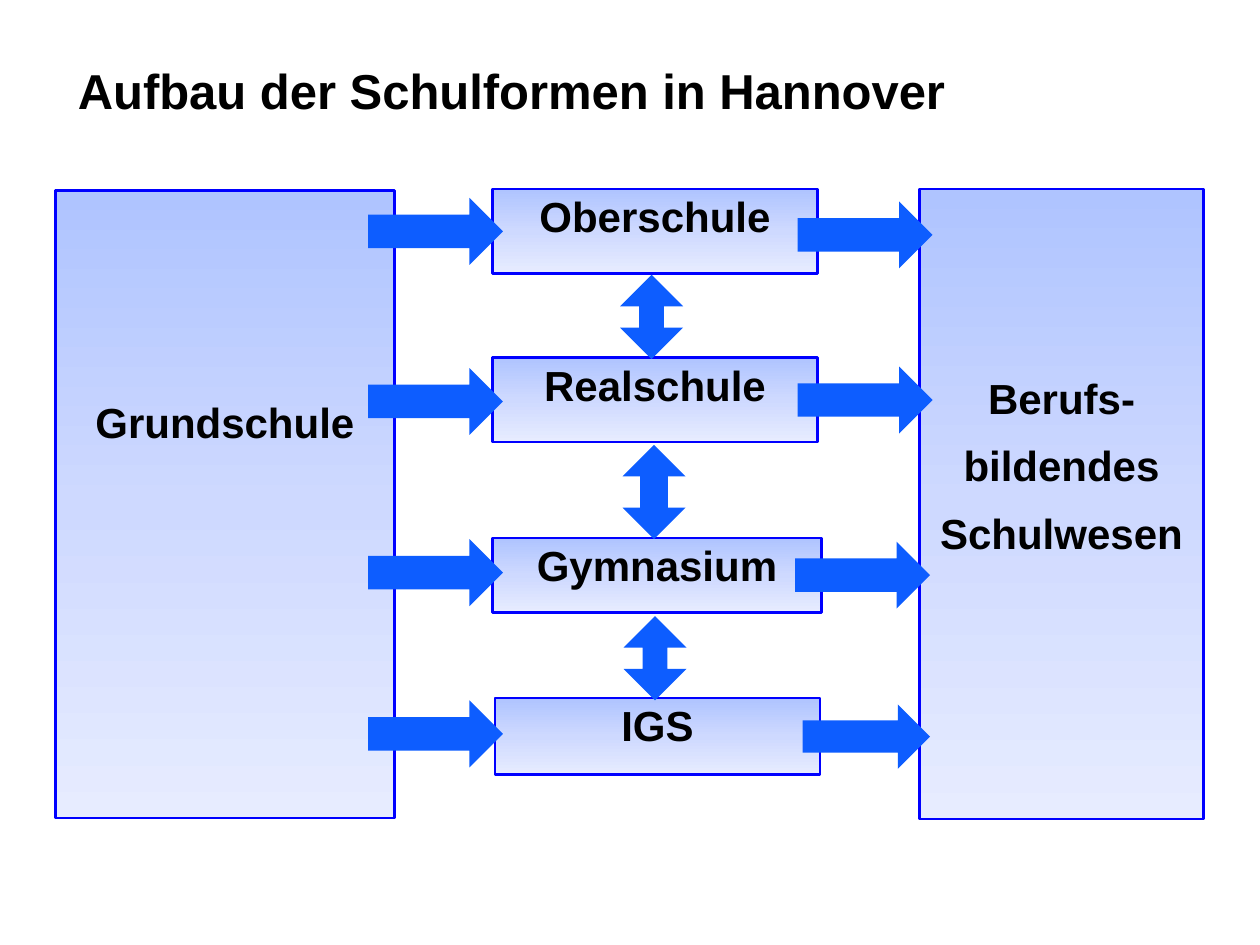
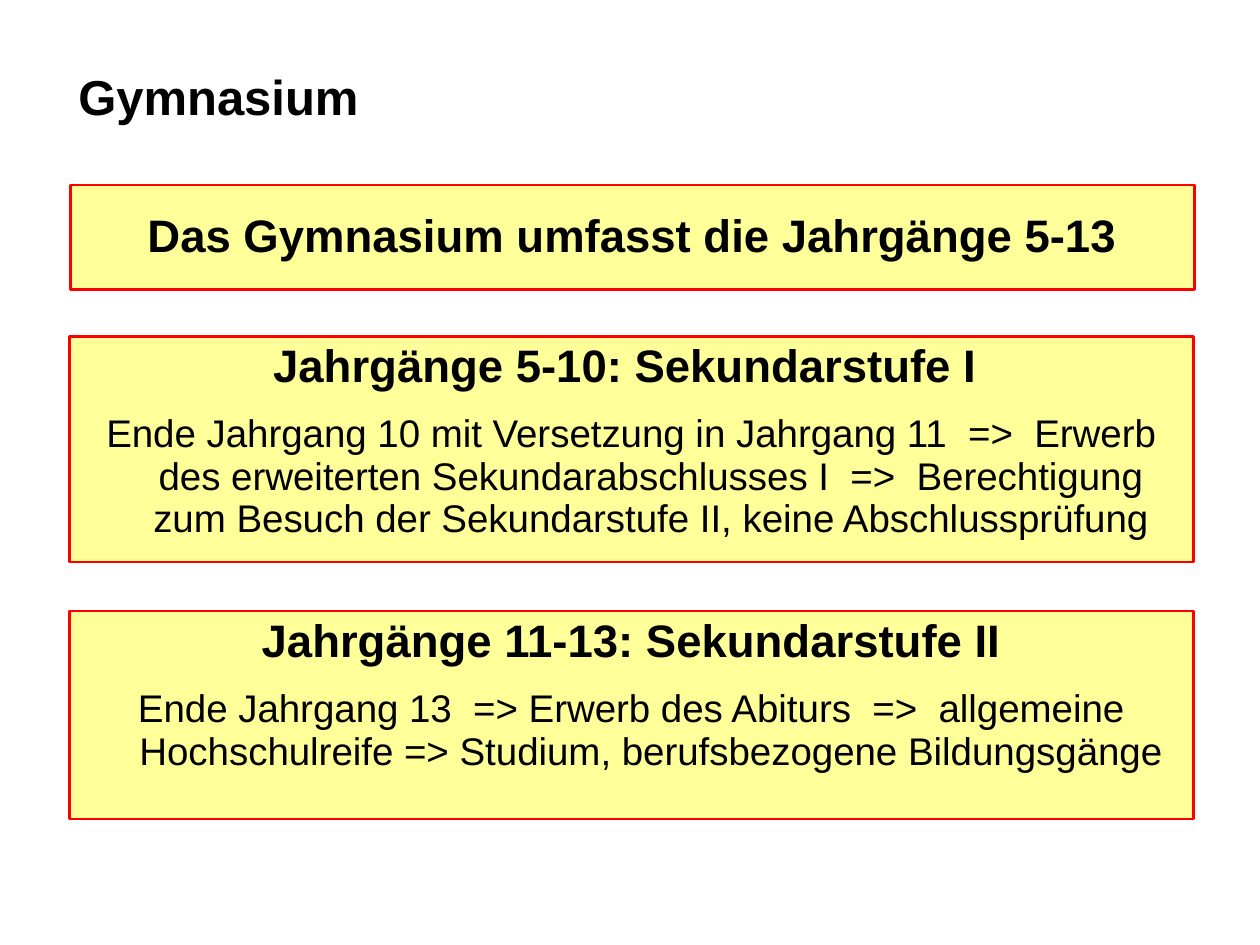
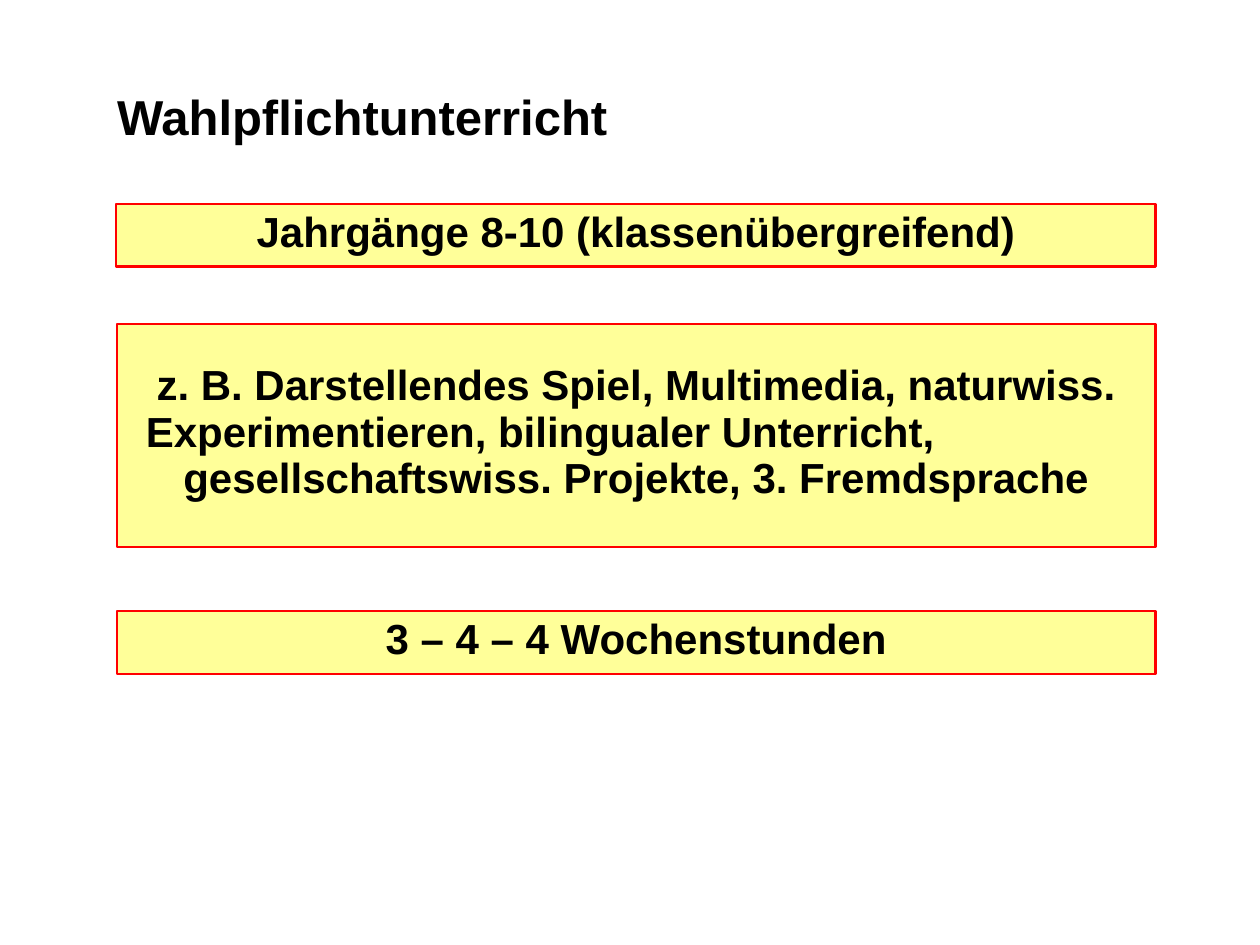
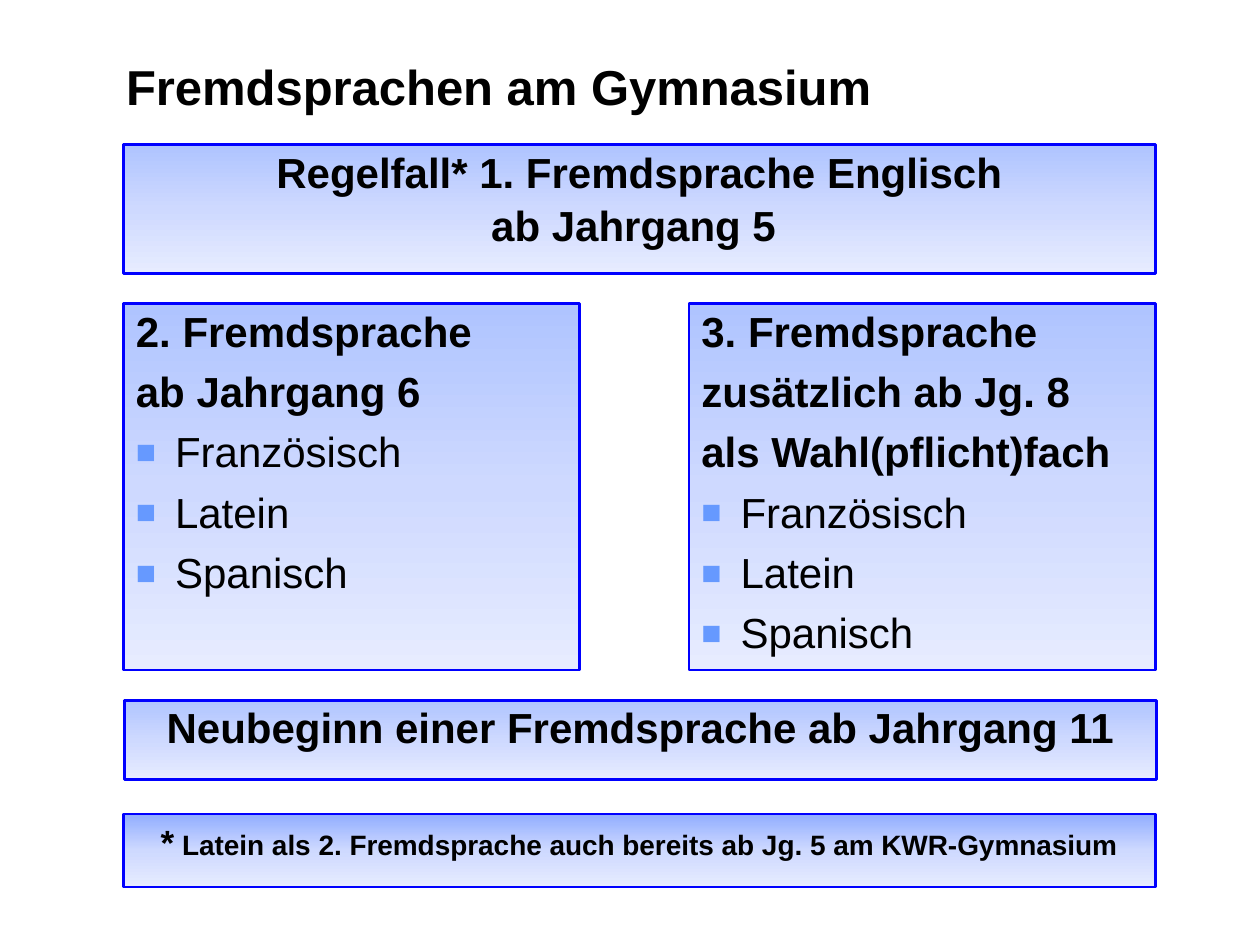
from dataclasses import dataclass

import lxml.etree
import pptx
import pptx.dml.color
import pptx.enum.shapes
import pptx.enum.text
import pptx.oxml.ns
import pptx.presentation
import pptx.shapes.autoshape
import pptx.slide
import pptx.text.text
import pptx.util

Cm = pptx.util.Cm
Pt = pptx.util.Pt
Kind = pptx.enum.shapes.MSO_SHAPE
Align = pptx.enum.text.PP_ALIGN
Anchor = pptx.enum.text.MSO_ANCHOR
qn = pptx.oxml.ns.qn


@dataclass(frozen=True)
class Theme:
    font: str = "Arial"
    ink: str = "000000"
    blue: tuple[str, ...] = ("AFC4FF", "CED9FF", "E7ECFF")
    deep: tuple[str, ...] = ("91ADFF", "CED9FF", "E7ECFF")
    edge: str = "0000FF"
    sand: tuple[str, ...] = ("FFFF99",)
    red: str = "FF0000"
    arrow: str = "0D5DFF"
    bullet: str = "6699FF"
    title: int = 28
    head: int = 26
    main: int = 24
    body: int = 22
    star: int = 20
    note: int = 16
    line: float = 1.5
    lead: float = 0.92


THEME = Theme()
HANG = 0.79


@dataclass(frozen=True)
class Place:
    left: float
    top: float
    width: float
    height: float


@dataclass(frozen=True)
class Para:
    text: str
    size: int = THEME.main
    bold: bool = True
    align: Align = Align.CENTER
    left: float = 0
    hang: float = 0
    bullet: bool = False
    star: str = ""
    lead: float = THEME.lead


@dataclass(frozen=True)
class Box:
    place: Place
    paras: tuple[Para, ...]
    fill: tuple[str, ...] = THEME.blue
    edge: str = THEME.edge
    gap: float = 12
    inset: float = 0.13
    anchor: Anchor = Anchor.TOP


@dataclass(frozen=True)
class Arrow:
    place: Place
    kind: Kind = Kind.RIGHT_ARROW
    shape: tuple[float, float] = (0.5, 0.5)


@dataclass(frozen=True)
class Head:
    text: str
    place: Place
    inset: float = 0.25


@dataclass(frozen=True)
class Page:
    head: Head
    boxes: tuple[Box, ...]
    arrows: tuple[Arrow, ...] = ()


def rgb(code: str) -> pptx.dml.color.RGBColor:
    return pptx.dml.color.RGBColor.from_string(code)


def style(para: pptx.text.text._Paragraph, size: int, bold: bool) -> None:
    font = para.font
    font.name = THEME.font
    font.size = Pt(size)
    font.bold = bold
    font.color.rgb = rgb(THEME.ink)


def put_mark(para: pptx.text.text._Paragraph) -> None:
    props = para._p.get_or_add_pPr()
    tint = lxml.etree.SubElement(props, qn("a:buClr"))
    lxml.etree.SubElement(tint, qn("a:srgbClr"), val=THEME.bullet)
    lxml.etree.SubElement(props, qn("a:buSzPct"), val="80000")
    lxml.etree.SubElement(props, qn("a:buFont"), typeface=THEME.font)
    lxml.etree.SubElement(props, qn("a:buChar"), char="■")


def write(para: pptx.text.text._Paragraph, item: Para, gap: float, first: bool) -> None:
    para.alignment = item.align
    para.line_spacing = item.lead
    para.space_before = Pt(0 if first else gap / 2)
    para.space_after = Pt(gap / 2)
    if item.left:
        props = para._p.get_or_add_pPr()
        props.set("marL", str(Cm(item.left)))
        props.set("indent", str(Cm(-item.hang)))
    if item.bullet:
        put_mark(para)
    style(para, item.size, item.bold)
    if item.star:
        run = para.add_run()
        run.text = item.star
        run.font.size = Pt(THEME.star)
    para.add_run().text = item.text


def add(slide: pptx.slide.Slide, kind: Kind, place: Place) -> pptx.shapes.autoshape.Shape:
    shape = slide.shapes.add_shape(
        kind, Cm(place.left), Cm(place.top), Cm(place.width), Cm(place.height)
    )
    shape.shadow.inherit = False
    return shape


def paint(shape: pptx.shapes.autoshape.Shape, tones: tuple[str, ...]) -> None:
    if len(tones) == 1:
        shape.fill.solid()
        shape.fill.fore_color.rgb = rgb(tones[0])
        return
    shape.fill.gradient()
    shape.fill.gradient_angle = 270
    stops = shape._element.spPr.find(".//" + qn("a:gsLst"))
    for stop in list(stops):
        stops.remove(stop)
    for index, tone in enumerate(tones):
        share = 100000 * index // (len(tones) - 1)
        stop = lxml.etree.SubElement(stops, qn("a:gs"), pos=str(share))
        lxml.etree.SubElement(stop, qn("a:srgbClr"), val=tone)


def draw_box(slide: pptx.slide.Slide, box: Box) -> None:
    shape = add(slide, Kind.RECTANGLE, box.place)
    paint(shape, box.fill)
    shape.line.color.rgb = rgb(box.edge)
    shape.line.width = Pt(THEME.line)
    frame = shape.text_frame
    frame.word_wrap = True
    frame.vertical_anchor = box.anchor
    frame.margin_top = Cm(box.inset)
    for index, item in enumerate(box.paras):
        para = frame.add_paragraph() if index else frame.paragraphs[0]
        write(para, item, box.gap, index == 0)


def draw_arrow(slide: pptx.slide.Slide, arrow: Arrow) -> None:
    shape = add(slide, arrow.kind, arrow.place)
    paint(shape, (THEME.arrow,))
    shape.line.fill.background()
    for index, value in enumerate(arrow.shape):
        shape.adjustments[index] = value


def draw_head(slide: pptx.slide.Slide, head: Head) -> None:
    title = slide.shapes.title
    title.left, title.top = Cm(head.place.left), Cm(head.place.top)
    title.width, title.height = Cm(head.place.width), Cm(head.place.height)
    frame = title.text_frame
    frame.auto_size = pptx.enum.text.MSO_AUTO_SIZE.NONE
    frame.word_wrap = True
    frame.vertical_anchor = Anchor.MIDDLE
    frame.margin_left = Cm(head.inset)
    para = frame.paragraphs[0]
    para.alignment = Align.LEFT
    para.line_spacing = THEME.lead
    style(para, THEME.title, True)
    para.add_run().text = head.text


def draw_page(deck: pptx.presentation.Presentation, page: Page) -> None:
    slide = deck.slides.add_slide(deck.slide_layouts[5])
    draw_head(slide, page.head)
    for box in page.boxes:
        draw_box(slide, box)
    for arrow in page.arrows:
        draw_arrow(slide, arrow)


def head_at(text: str, left: float, top: float, width: float = 17.88,
            inset: float = 0.25) -> Head:
    return Head(text, Place(left, top, width, 2.18), inset)


def sand(place: Place, *paras: Para, inset: float = 0.13, gap: float = 12,
         anchor: Anchor = Anchor.TOP) -> Box:
    return Box(place, paras, THEME.sand, THEME.red, gap, inset, anchor)


def stage(top: float, height: float, head: str, body: str) -> Box:
    return sand(
        Place(1.4, top, 22.66, height),
        Para(head, THEME.head, left=HANG, hang=HANG),
        Para(body, THEME.body, False, left=HANG, hang=HANG),
    )


def tongue(left: float, width: float, heads: tuple[str, ...]) -> Box:
    names = ("Französisch", "Latein", "Spanisch")
    lines = tuple(Para(text, align=Align.LEFT, left=HANG, hang=HANG) for text in heads)
    items = tuple(
        Para(name, bold=False, align=Align.LEFT, left=HANG, hang=HANG, bullet=True)
        for name in names
    )
    return Box(Place(left, 6.12, width, 7.39), lines + items, gap=8)


def schools() -> Page:
    forms = (
        ("Oberschule", Place(9.93, 3.81, 6.55, 1.7)),
        ("Realschule", Place(9.93, 7.21, 6.55, 1.7)),
        ("Gymnasium", Place(9.93, 10.85, 6.63, 1.5)),
        ("IGS", Place(9.98, 14.07, 6.55, 1.55)),
    )
    start = Box(Place(1.12, 3.84, 6.83, 12.65), (Para("Grundschule"),), inset=4.26)
    goal = Box(
        Place(18.54, 3.81, 5.72, 12.7),
        tuple(Para(text) for text in ("Berufs-", "bildendes", "Schulwesen")),
        inset=3.8,
    )
    swaps = ((12.5, 5.54, 1.7, 0.39), (12.55, 8.97, 1.9, 0.44), (12.57, 12.42, 1.7, 0.39))
    ways = tuple(Place(7.42, top, 2.72, 1.35) for top in (3.99, 7.42, 10.87, 14.12)) + (
        Place(16.08, 4.06, 2.72, 1.35),
        Place(16.08, 7.39, 2.72, 1.35),
        Place(16.03, 10.92, 2.72, 1.35),
        Place(16.18, 14.2, 2.57, 1.3),
    )
    return Page(
        head_at("Aufbau der Schulformen in Hannover", 1.32, 0.79, 18.59),
        (start, *(Box(place, (Para(name),)) for name, place in forms), goal),
        tuple(
            Arrow(Place(left, top, 1.27, height), Kind.UP_DOWN_ARROW, (0.45, tip))
            for left, top, height, tip in swaps
        ) + tuple(Arrow(place) for place in ways),
    )


def grades() -> Page:
    return Page(
        head_at("Gymnasium", 1.09, 0.91, inset=0.49),
        (
            sand(
                Place(1.42, 3.73, 22.66, 2.11),
                Para("Das Gymnasium umfasst die Jahrgänge 5-13", THEME.head),
                gap=0,
                anchor=Anchor.MIDDLE,
            ),
            stage(
                6.78, 4.55, "Jahrgänge 5-10: Sekundarstufe I ",
                "Ende Jahrgang 10 mit Versetzung in Jahrgang 11  =>  Erwerb des "
                "erweiterten Sekundarabschlusses I  =>  Berechtigung zum Besuch der "
                "Sekundarstufe II, keine Abschlussprüfung",
            ),
            stage(
                12.32, 4.19, "Jahrgänge 11-13: Sekundarstufe II",
                "Ende Jahrgang 13  => Erwerb des Abiturs  =>  allgemeine "
                "Hochschulreife => Studium, berufsbezogene Bildungsgänge",
            ),
        ),
    )


def choice() -> Page:
    return Page(
        head_at("Wahlpflichtunterricht", 2.11, 1.32),
        (
            sand(Place(2.34, 4.11, 20.96, 1.27), Para("Jahrgänge 8-10 (klassenübergreifend)")),
            sand(
                Place(2.36, 6.53, 20.93, 4.5),
                Para("z. B. Darstellendes Spiel, Multimedia, naturwiss."),
                Para("Experimentieren, bilingualer Unterricht,", align=Align.LEFT, left=0.33),
                Para("gesellschaftswiss. Projekte, 3. Fremdsprache"),
                inset=0.8,
                gap=0,
            ),
            sand(Place(2.36, 12.32, 20.93, 1.27), Para("3 – 4 – 4 Wochenstunden")),
        ),
    )


def tongues() -> Page:
    return Page(
        head_at("Fremdsprachen am Gymnasium", 1.5, 0.71, inset=1.04),
        (
            Box(
                Place(2.49, 2.92, 20.8, 2.59),
                (Para("Regelfall* 1. Fremdsprache Englisch"), Para("ab Jahrgang 5 ")),
                gap=4,
            ),
            tongue(2.49, 9.19, ("2. Fremdsprache", "ab Jahrgang 6")),
            tongue(
                13.89, 9.4,
                ("3. Fremdsprache", "zusätzlich ab Jg. 8", "als Wahl(pflicht)fach"),
            ),
            Box(
                Place(2.51, 14.12, 20.8, 1.6),
                (Para("Neubeginn einer Fremdsprache ab Jahrgang 11"),),
                gap=4,
            ),
            Box(
                Place(2.49, 16.41, 20.8, 1.47),
                (
                    Para(
                        " Latein als 2. Fremdsprache auch bereits ab Jg. 5 am KWR-Gymnasium",
                        THEME.note, star="*", lead=1.0,
                    ),
                ),
                fill=THEME.deep,
                gap=4,
            ),
        ),
    )


def main() -> None:
    deck = pptx.Presentation()
    deck.slide_width, deck.slide_height = Cm(25.4), Cm(19.05)
    for page in (schools(), grades(), choice(), tongues()):
        draw_page(deck, page)
    deck.save("out.pptx")


if __name__ == "__main__":
    main()
